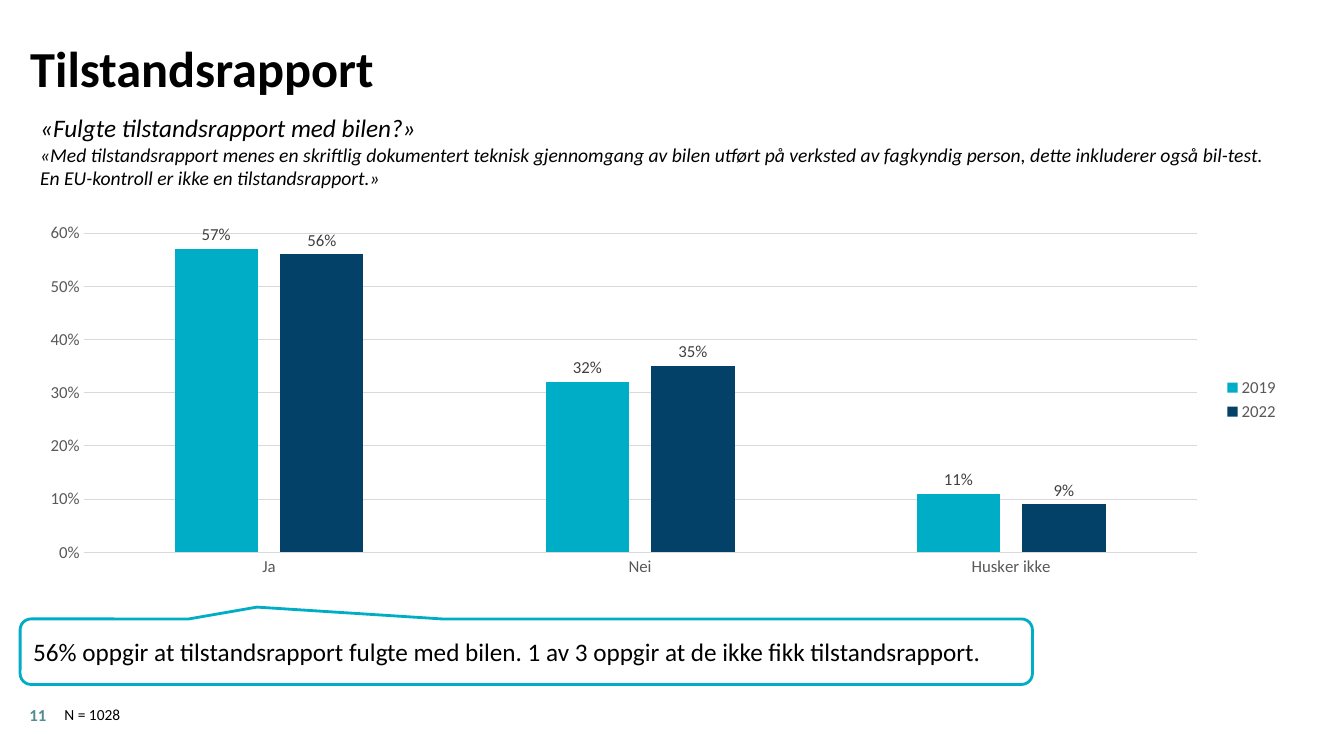
from pptx import Presentation
from pptx.chart.data import CategoryChartData
from pptx.dml.color import RGBColor
from pptx.enum.chart import XL_CHART_TYPE, XL_LABEL_POSITION, XL_LEGEND_POSITION, XL_TICK_MARK
from pptx.enum.shapes import MSO_SHAPE
from pptx.enum.text import MSO_ANCHOR, PP_ALIGN
from pptx.util import Inches, Pt

COLUMNS = XL_CHART_TYPE.COLUMN_CLUSTERED
OUTSIDE = XL_LABEL_POSITION.OUTSIDE_END
RIGHT = XL_LEGEND_POSITION.RIGHT
NO_TICK = XL_TICK_MARK.NONE
CALLOUT = MSO_SHAPE.ROUNDED_RECTANGULAR_CALLOUT
TOP, MIDDLE, BOTTOM = MSO_ANCHOR.TOP, MSO_ANCHOR.MIDDLE, MSO_ANCHOR.BOTTOM
LEFT = PP_ALIGN.LEFT

FONT = "Calibri"
COLORS = {
    "text": "000000", "background": "FFFFFF", "number": "548C95",
    "axis": "595959", "label": "404040", "grid": "D9D9D9",
    "2019": "00ADC6", "2022": "044169",
}
CATEGORIES = ["Ja", "Nei", "Husker ikke"]
SERIES = {"2019": [0.57, 0.32, 0.11], "2022": [0.56, 0.35, 0.09]}


def rgb(name):
    return RGBColor.from_string(COLORS[name])


def inches(box):
    return [Inches(v) for v in box]


def set_font(font, size, color="text", **style):
    for name, value in {"name": FONT, "size": Pt(size), **style}.items():
        setattr(font, name, value)
    font.color.rgb = rgb(color)


def set_frame(tf, anchor, margin=None):
    tf.word_wrap = True
    tf.vertical_anchor = anchor
    if margin is not None:
        for side in ("left", "top", "right", "bottom"):
            setattr(tf, f"margin_{side}", Inches(margin))


def write(tf, lines):
    """Fill a frame from (text, font format) pairs, one paragraph each."""
    for i, (text, style) in enumerate(lines):
        p = tf.paragraphs[0] if i == 0 else tf.add_paragraph()
        p.alignment = LEFT
        r = p.add_run()
        r.text = text
        set_font(r.font, **style)


def add_title(s, box, text):
    title = s.shapes.title
    title.left, title.top, title.width, title.height = inches(box)
    tf = title.text_frame
    set_frame(tf, BOTTOM, 0)
    write(tf, [(text, {"size": 36, "bold": True})])
    tf.paragraphs[0].line_spacing = 1.1


def add_text(s, box, lines, anchor=TOP, margin=None):
    tf = s.shapes.add_textbox(*inches(box)).text_frame
    set_frame(tf, anchor, margin)
    write(tf, lines)


def add_answer_chart(s, box):
    data = CategoryChartData(number_format="0%")
    data.categories = CATEGORIES
    for year, values in SERIES.items():
        data.add_series(year, values)
    chart = s.shapes.add_chart(COLUMNS, *inches(box), data).chart
    set_font(chart.font, 12, "axis")
    chart.has_title = False
    chart.has_legend = True
    chart.legend.position = RIGHT
    chart.legend.include_in_layout = False
    set_font(chart.legend.font, 12, "axis")

    for axis in (chart.category_axis, chart.value_axis):
        axis.major_tick_mark = axis.minor_tick_mark = NO_TICK
        set_font(axis.tick_labels.font, 12, "axis")
    value_axis = chart.value_axis
    value_axis.minimum_scale, value_axis.maximum_scale = 0, 0.6
    value_axis.major_unit = 0.1
    value_axis.tick_labels.number_format = "0%"
    value_axis.tick_labels.number_format_is_linked = False
    value_axis.format.line.fill.background()
    for line in (chart.category_axis.format.line, value_axis.major_gridlines.format.line):
        line.color.rgb = rgb("grid")
        line.width = Pt(0.75)

    plot = chart.plots[0]
    plot.gap_width, plot.overlap = 219, -27
    plot.vary_by_categories = False
    for series in plot.series:
        series.format.fill.solid()
        series.format.fill.fore_color.rgb = rgb(series.name)
        series.invert_if_negative = False
        labels = series.data_labels
        labels.show_value = True
        labels.position = OUTSIDE
        labels.number_format = "0%"
        labels.number_format_is_linked = False
        set_font(labels.font, 12, "label")


def add_callout(s, box, text):
    sp = s.shapes.add_shape(CALLOUT, *inches(box))
    for i, value in enumerate((-0.266, -0.681, 0.167)):
        sp.adjustments[i] = value
    sp.shadow.inherit = False
    sp.fill.solid()
    sp.fill.fore_color.rgb = rgb("background")
    sp.line.color.rgb = rgb("2019")
    sp.line.width = Pt(2)
    set_frame(sp.text_frame, MIDDLE)
    write(sp.text_frame, [(text, {"size": 18})])


def add_footer(s, left, top):
    add_text(s, (left, top + 0.04, 0.25, 0.2),
             [("11", {"size": 12, "color": "number", "bold": True})], MIDDLE, 0)
    add_text(s, (left + 0.25, top, 12.17, 0.29), [("N = 1028", {"size": 11})])


def main():
    prs = Presentation()
    prs.slide_width, prs.slide_height = Inches(13.33), Inches(7.5)
    s = prs.slides.add_slide(prs.slide_layouts.get_by_name("Title Only"))
    add_title(s, (0.3, 0.34, 12.77, 0.63), "Tilstandsrapport")
    add_text(s, (0.3, 1.06, 12.4, 0.88), [
        ("«Fulgte tilstandsrapport med bilen?»", {"size": 18, "italic": True}),
        ("«Med tilstandsrapport menes en skriftlig dokumentert teknisk gjennomgang av bilen "
         "utført på verksted av fagkyndig person, dette inkluderer også bil-test. "
         "En EU-kontroll er ikke en tilstandsrapport.»", {"size": 14, "italic": True}),
    ], MIDDLE)
    add_answer_chart(s, (0.25, 2.14, 12.54, 3.65))
    add_callout(s, (0.2, 6.14, 10.04, 0.65),
                "56% oppgir at tilstandsrapport fulgte med bilen. "
                "1 av 3 oppgir at de ikke fikk tilstandsrapport.")
    add_footer(s, 0.29, 6.95)
    prs.save("out.pptx")


if __name__ == "__main__":
    main()
